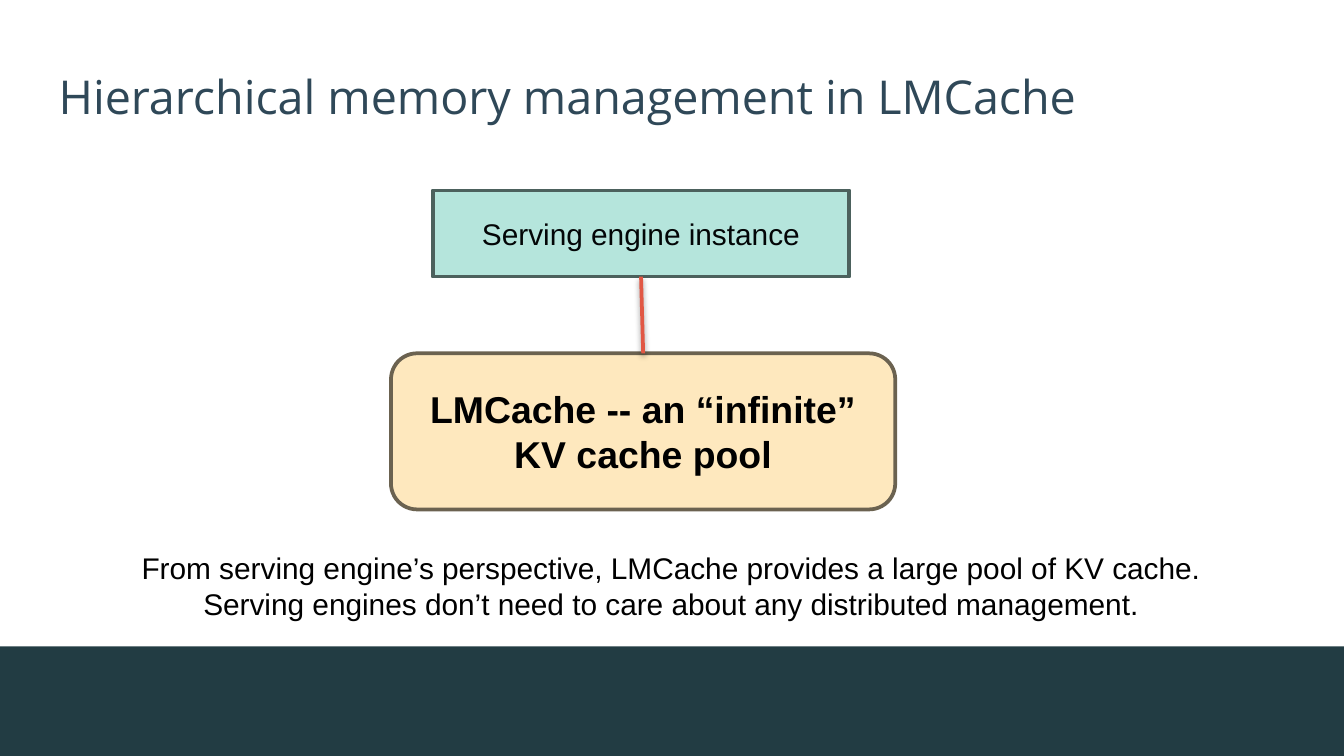
from dataclasses import dataclass

from lxml.etree import SubElement
from pptx import Presentation
from pptx.dml.color import RGBColor
from pptx.enum.shapes import MSO_CONNECTOR, MSO_SHAPE
from pptx.enum.text import MSO_ANCHOR, PP_ALIGN
from pptx.oxml.ns import qn
from pptx.util import Cm, Pt


@dataclass(frozen=True)
class Theme:
    footer: str = "223C43"
    title: str = "2F4858"
    black: str = "000000"
    engine_text: str = "030607"
    engine_fill: str = "B5E5DC"
    engine_line: str = "4C615D"
    pool_fill: str = "FEE8BE"
    pool_line: str = "6B6250"
    link: str = "E15744"
    title_font: str = "Open Sans"
    body_font: str = "Arial"
    title_size: int = 25
    pool_size: int = 20
    body_size: int = 16
    line_width: int = 2


theme = Theme()


def add_box(preset, box, fill, line=None):
    shape = slide.shapes.add_shape(preset, *map(Cm, box))
    shape.shadow.inherit = False
    shape.fill.solid()
    shape.fill.fore_color.rgb = RGBColor.from_string(fill)
    if line:
        shape.line.color.rgb = RGBColor.from_string(line)
        shape.line.width = Pt(theme.line_width)
    else:
        shape.line.fill.background()
    return shape


def write(shape, text, color, font_format, margin, alignment, anchor):
    """Fill the shape with one paragraph in a single style."""
    frame = shape.text_frame
    frame_format = {"word_wrap": True, "vertical_anchor": anchor}
    for side in ("left", "top", "right", "bottom"):
        frame_format[f"margin_{side}"] = Cm(margin)
    for name, value in frame_format.items():
        setattr(frame, name, value)
    paragraph = frame.paragraphs[0]
    paragraph.alignment = alignment
    run = paragraph.add_run()
    run.text = text
    for name, value in font_format.items():
        setattr(run.font, name, value)
    run.font.color.rgb = RGBColor.from_string(color)


presentation = Presentation()
presentation.slide_width = Cm(25.4)
presentation.slide_height = Cm(14.29)
slide = presentation.slides.add_slide(presentation.slide_layouts[6])

title_format = {"name": theme.title_font, "size": Pt(theme.title_size)}
body_format = {"name": theme.body_font, "size": Pt(theme.body_size)}
pool_format = {"name": theme.body_font, "size": Pt(theme.pool_size), "bold": True}

# Footer band and title
add_box(MSO_SHAPE.RECTANGLE, (0, 12.22, 25.4, 2.07), theme.footer)
title = slide.shapes.add_textbox(Cm(0.86), Cm(1.02), Cm(23.67), Cm(1.6))
write(title, "Hierarchical memory management in LMCache", theme.title, title_format,
      0.25, PP_ALIGN.LEFT, MSO_ANCHOR.MIDDLE)

# Serving engine on top of the cache pool
engine = add_box(MSO_SHAPE.RECTANGLE, (8.18, 3.6, 7.87, 1.63),
                 theme.engine_fill, theme.engine_line)
write(engine, "Serving engine instance", theme.engine_text, body_format,
      0.3, PP_ALIGN.CENTER, MSO_ANCHOR.MIDDLE)

pool = add_box(MSO_SHAPE.ROUNDED_RECTANGLE, (7.39, 6.68, 9.53, 2.95),
               theme.pool_fill, theme.pool_line)
write(pool, "LMCache -- an “infinite” KV cache pool", theme.black, pool_format,
      0.3, PP_ALIGN.CENTER, MSO_ANCHOR.MIDDLE)

# Link between the two, with a soft shadow below
link = slide.shapes.add_connector(MSO_CONNECTOR.STRAIGHT, 0, 0, 0, 0)
link.begin_connect(engine, 2)
link.end_connect(pool, 0)
link.line.color.rgb = RGBColor.from_string(theme.link)
link.line.width = Pt(theme.line_width)
effects = SubElement(link._element.spPr, qn("a:effectLst"))
shadow = SubElement(effects, qn("a:outerShdw"), blurRad=str(Pt(3)), dist=str(Pt(1.6)),
                    dir="5400000", rotWithShape="0")
shadow_color = SubElement(shadow, qn("a:srgbClr"), val=theme.black)
SubElement(shadow_color, qn("a:alpha"), val="38000")

# Caption
caption = slide.shapes.add_textbox(Cm(2.03), Cm(10.26), Cm(21.31), Cm(1.5))
caption_text = (
    "From serving engine’s perspective, LMCache provides a large pool of KV cache. "
    "Serving engines don’t need to care about any distributed management."
)
write(caption, caption_text, theme.black, body_format,
      0.13, PP_ALIGN.CENTER, MSO_ANCHOR.TOP)

presentation.save("out.pptx")
